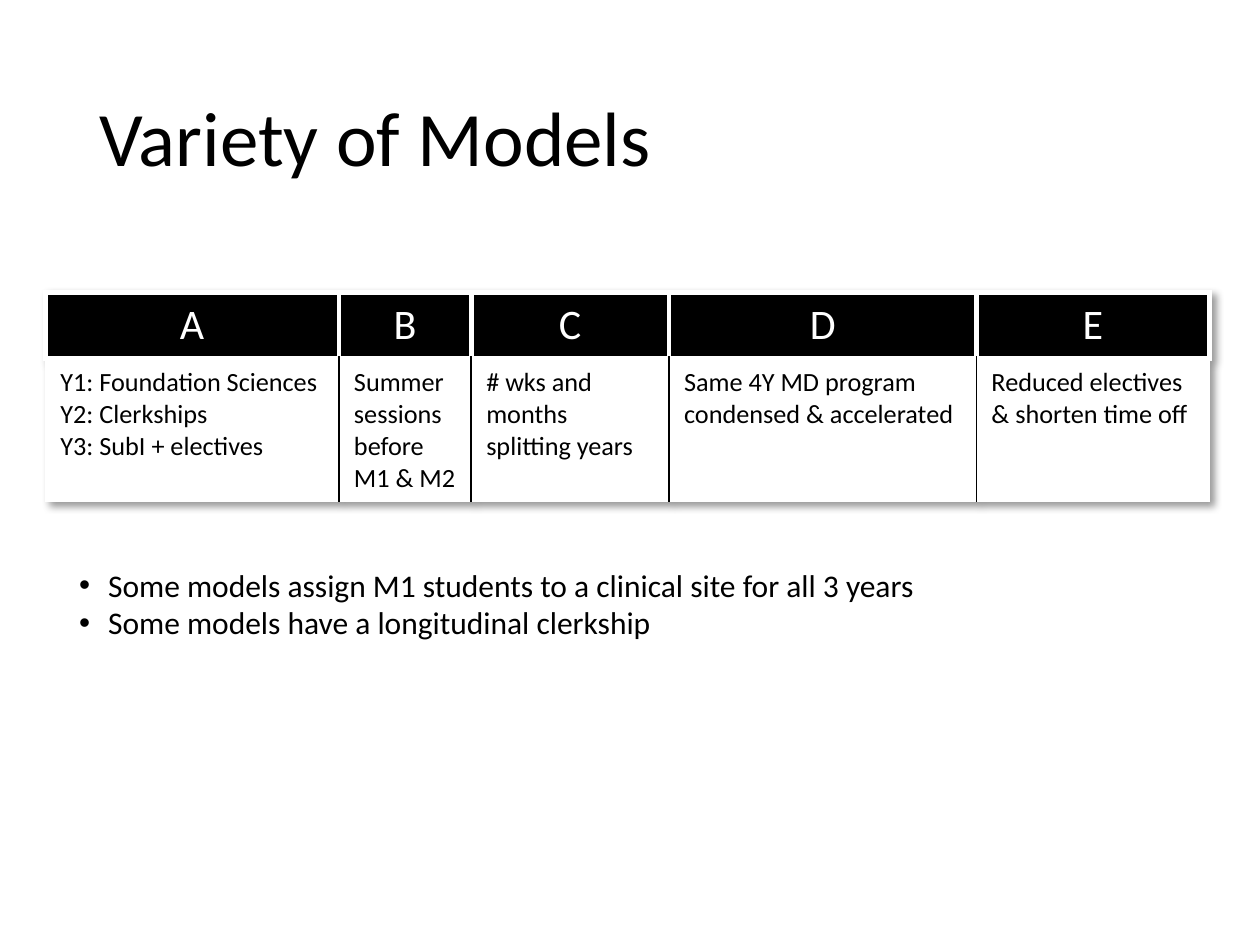
import pptx
import pptx.dml.color
import pptx.enum.text
import pptx.oxml
import pptx.oxml.ns
import pptx.util
from pptx.util import Inches

FONT = "Calibri"
BLACK, WHITE = "000000", "FFFFFF"
NAMESPACE = pptx.oxml.ns.nsdecls("a")
ALIGN = pptx.enum.text.PP_ALIGN

MODELS = [
    ("A", 2.33, ["Y1: Foundation Sciences", "Y2: Clerkships", "Y3: SubI + electives"]),
    ("B", 1.05, ["Summer sessions before M1 & M2"]),
    ("C", 1.57, ["# wks and months splitting years"]),
    ("D", 2.44, ["Same 4Y MD program condensed & accelerated"]),
    ("E", 1.85, ["Reduced electives & shorten time off"]),
]
NOTES = [
    "Some models assign M1 students to a clinical site for all 3 years",
    "Some models have a longitudinal clerkship",
]


def rgb(color):
    return pptx.dml.color.RGBColor.from_string(color)


def write(text_frame, lines, size, color, align=ALIGN.LEFT):
    text_frame.text = "\n".join(lines)
    for paragraph in text_frame.paragraphs:
        paragraph.alignment = align
        paragraph.font.name = FONT
        paragraph.font.size = pptx.util.Pt(size)
        paragraph.font.color.rgb = rgb(color)


def set_borders(cell, borders):
    """Draw sides given as {side: (color, points)}; None leaves a side bare."""
    properties = cell._tc.get_or_add_tcPr()
    for position, side in enumerate("LRTB"):
        if borders[side]:
            color, points = borders[side]
            width = pptx.util.Pt(points)
            fill = f'<a:solidFill><a:srgbClr val="{color}"/></a:solidFill>'
        else:
            width, fill = 0, "<a:noFill/>"
        line = pptx.oxml.parse_xml(f'<a:ln{side} {NAMESPACE} w="{width}">{fill}</a:ln{side}>')
        properties.insert(position, line)


def add_table_shadow(table):
    shadow = pptx.oxml.parse_xml(
        f'<a:effectLst {NAMESPACE}><a:outerShdw blurRad="50800" dist="38100" dir="2700000" '
        f'algn="tl" rotWithShape="0"><a:srgbClr val="{BLACK}"><a:alpha val="40000"/>'
        "</a:srgbClr></a:outerShdw></a:effectLst>")
    table._tbl.tblPr.insert(0, shadow)


def fill_cell(cell, lines, size, color, background, align=ALIGN.LEFT):
    cell.margin_left = cell.margin_right = Inches(0.12)
    cell.margin_top = cell.margin_bottom = Inches(0.06)
    cell.fill.solid()
    cell.fill.fore_color.rgb = rgb(background)
    write(cell.text_frame, lines, size, color, align)


def add_title(slide, text, left, top, width, height):
    title = slide.shapes.title
    title.left, title.top, title.width, title.height = left, top, width, height
    write(title.text_frame, [text], 44, BLACK)
    title.text_frame.vertical_anchor = pptx.enum.text.MSO_ANCHOR.MIDDLE
    title.text_frame.paragraphs[0].line_spacing = 0.9


def add_models_table(slide, left, top, width, height):
    table = slide.shapes.add_table(2, len(MODELS), left, top, width, height).table
    table.horz_banding = False
    add_table_shadow(table)
    table.rows[0].height = Inches(0.52)
    table.rows[1].height = height - Inches(0.52)
    thick, thin = (WHITE, 3), (BLACK, 1)
    last = len(MODELS) - 1
    for index, (name, column_width, lines) in enumerate(MODELS):
        table.columns[index].width = Inches(column_width)
        header, body = table.cell(0, index), table.cell(1, index)
        fill_cell(header, [name], 24, WHITE, BLACK, ALIGN.CENTER)
        set_borders(header, dict.fromkeys("LRTB", thick))
        fill_cell(body, lines, 15, BLACK, WHITE)
        # Only the inner dividers of the body row are ruled
        set_borders(body, {"L": thin if index > 0 else None,
                           "R": thin if index < last else None,
                           "T": thick, "B": None})


def add_notes(slide, left, top, width, height):
    text_frame = slide.shapes.add_textbox(left, top, width, height).text_frame
    text_frame.word_wrap = True
    write(text_frame, NOTES, 18, BLACK)
    indent = Inches(0.23)
    for paragraph in text_frame.paragraphs:
        properties = paragraph._p.get_or_add_pPr()
        properties.set("marL", str(indent))
        properties.set("indent", str(-indent))
        for bullet in ('<a:buFont {} typeface="Arial"/>', '<a:buChar {} char="•"/>'):
            properties.insert_element_before(
                pptx.oxml.parse_xml(bullet.format(NAMESPACE)), "a:tabLst", "a:defRPr")


def main():
    presentation = pptx.Presentation()
    presentation.slide_width, presentation.slide_height = Inches(10), Inches(7.5)
    slide = presentation.slides.add_slide(presentation.slide_layouts[5])

    # Title, table of models, closing bullets
    add_title(slide, "Variety of Models", Inches(0.69), Inches(0.4), Inches(8.62), Inches(1.45))
    add_models_table(slide, Inches(0.36), Inches(2.32), Inches(9.24), Inches(1.64))
    add_notes(slide, Inches(0.53), Inches(4.44), Inches(8.66), Inches(0.71))

    presentation.save("out.pptx")


if __name__ == "__main__":
    main()
